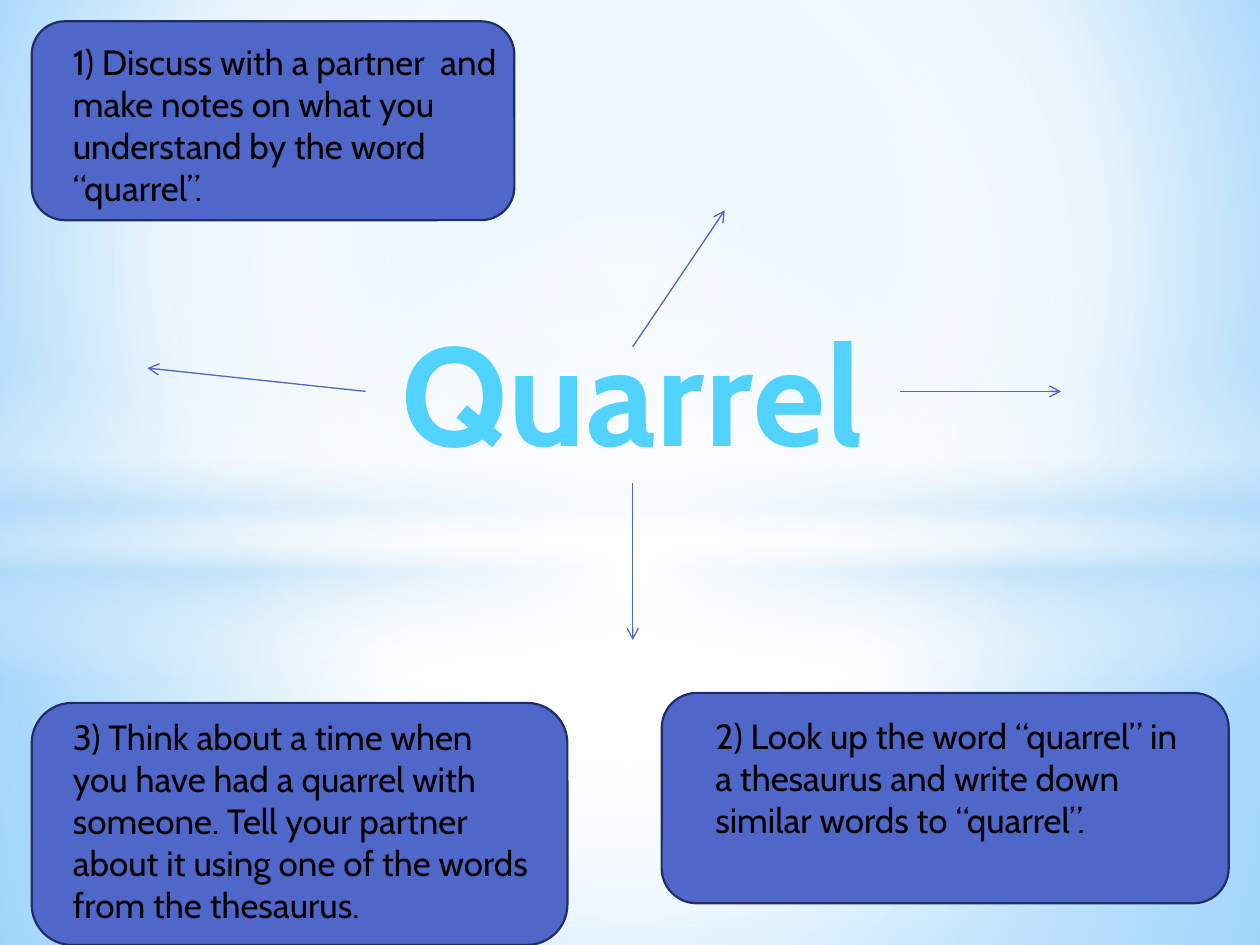
from dataclasses import dataclass
from typing import NamedTuple, Optional

from lxml import etree
from pptx import Presentation
from pptx.dml.color import RGBColor
from pptx.enum import shapes, text
from pptx.oxml.ns import qn
from pptx.util import Cm, Pt


@dataclass(frozen=True)
class Theme:
    font: str = "Cabin"
    head: int = 80
    body: int = 20
    ink: str = "000000"
    card: str = "4E67C8"
    edge: str = "1F2E69"
    white: str = "FFFFFF"
    mist: str = "B4DCFA"
    rim: float = 1.25
    line: float = 0.75


class Box(NamedTuple):
    left: float
    top: float
    width: float
    height: float

    def cm(self):
        return [Cm(n) for n in self]


class Stop(NamedTuple):
    pos: int
    color: str
    alpha: int = 100


class Layer(NamedTuple):
    kind: shapes.MSO_SHAPE
    box: Box
    stops: list
    angle: Optional[int] = None


class Card(NamedTuple):
    box: Box
    area: Box
    words: str


class Arrow(NamedTuple):
    start: tuple
    tip: tuple
    site: Optional[int] = None


T = Theme()
WIDE, HIGH = 25.4, 19.05
SPLIT = 10.74
MID = (50, 50, 50, 50)
HEAD = Box(7.37, 6.05, 10.77, 3.68)
KINDS = shapes.MSO_SHAPE

LAYERS = [
    Layer(KINDS.RECTANGLE, Box(0, SPLIT, WIDE, HIGH - SPLIT),
          [Stop(0, T.white, 91), Stop(37, T.white, 76), Stop(100, T.mist, 79)]),
    Layer(KINDS.RECTANGLE, Box(0, 0, WIDE, SPLIT),
          [Stop(0, T.white, 89), Stop(48, T.white, 62), Stop(100, T.mist, 79)]),
    Layer(KINDS.RECTANGLE, Box(0, 7.37, WIDE, 6.35),
          [Stop(0, T.white, 0), Stop(29, T.white, 30), Stop(45, T.mist, 40),
           Stop(55, T.white, 26), Stop(65, T.mist, 60), Stop(100, T.white, 0)], 90),
    Layer(KINDS.OVAL, Box(0, 4.45, WIDE, 14.17),
          [Stop(0, T.white), Stop(54, T.white, 0)]),
]

CARDS = [
    Card(Box(0.64, 0.43, 9.73, 4.01), Box(1.22, 0.69, 9.32, 3.68),
         "1) Discuss with a partner  and make notes on what you understand "
         "by the word “quarrel”."),
    Card(Box(13.34, 13.97, 11.43, 4.24), Box(14.17, 14.27, 9.96, 3.68),
         "2) Look up the word “quarrel” in a thesaurus and write down  "
         "similar words to “quarrel”."),
    Card(Box(0.64, 14.17, 10.8, 4.88), Box(1.22, 14.3, 9.8, 4.52),
         "3) Think about a time when you have had a quarrel with someone. "
         "Tell your partner about it using one of the words from the thesaurus."),
]

MID_X = HEAD.left + HEAD.width / 2
MID_Y = HEAD.top + HEAD.height / 2
ARROWS = [
    Arrow((HEAD.left, MID_Y), (2.97, 7.42), 1),
    Arrow((MID_X, 6.99), (14.61, 4.24)),
    Arrow((HEAD.left + HEAD.width, MID_Y), (21.39, MID_Y), 3),
    Arrow((MID_X, HEAD.top + HEAD.height), (MID_X, 12.9), 2),
]


def rgb(color: str) -> RGBColor:
    return RGBColor.from_string(color)


def blend(fill, host, stops: list, angle=None, focus: tuple = MID) -> None:
    """Give fill, the first gradient inside host, these stops; no angle means circular."""
    fill.gradient()
    grad = host.find(".//" + qn("a:gradFill"))
    for part in list(grad):
        grad.remove(part)
    group = etree.SubElement(grad, qn("a:gsLst"))
    for stop in stops:
        item = etree.SubElement(group, qn("a:gs"), pos=str(stop.pos * 1000))
        color = etree.SubElement(item, qn("a:srgbClr"), val=stop.color)
        if stop.alpha < 100:
            etree.SubElement(color, qn("a:alpha"), val=str(stop.alpha * 1000))
    if angle is not None:
        etree.SubElement(grad, qn("a:lin"), ang=str(angle * 60000), scaled="0")
    else:
        way = etree.SubElement(grad, qn("a:path"), path="circle")
        sides = {k: str(n * 1000) for k, n in zip("ltrb", focus)}
        etree.SubElement(way, qn("a:fillToRect"), **sides)


def write(shape, words: str, *, size: int, color: str = T.ink, bold: bool = False,
          wrap: bool = True, align=text.PP_ALIGN.LEFT):
    frame = shape.text_frame
    frame.word_wrap = wrap
    frame.auto_size = text.MSO_AUTO_SIZE.SHAPE_TO_FIT_TEXT
    frame.vertical_anchor = text.MSO_ANCHOR.TOP
    para = frame.paragraphs[0]
    para.alignment = align
    run = para.add_run()
    run.text = words
    font = run.font
    font.name, font.size, font.bold = T.font, Pt(size), bold
    font.color.rgb = rgb(color)
    return run


def add_layer(slide, layer: Layer) -> None:
    shape = slide.shapes.add_shape(layer.kind, *layer.box.cm())
    shape.shadow.inherit = False
    shape.line.fill.background()
    blend(shape.fill, shape.element, layer.stops, layer.angle)


def add_title(slide):
    title = slide.shapes.title
    title.left, title.top, title.width, title.height = HEAD.cm()
    run = write(title, "Quarrel", size=T.head, bold=True, wrap=False,
                align=text.PP_ALIGN.CENTER)
    blend(run.font.fill, title.element, [Stop(25, "52D2FF"), Stop(100, "20A0CE")], 90)
    run.font._element.set("spc", "50")
    slide.shapes.element.append(title.element)  # in front of the backdrop
    return title


def add_card(slide, card: Card) -> None:
    shape = slide.shapes.add_shape(KINDS.ROUNDED_RECTANGLE, *card.box.cm())
    shape.shadow.inherit = False
    shape.fill.solid()
    shape.fill.fore_color.rgb = rgb(T.card)
    shape.line.color.rgb = rgb(T.edge)
    shape.line.width = Pt(T.rim)
    write(slide.shapes.add_textbox(*card.area.cm()), card.words, size=T.body)


def add_arrow(slide, title, arrow: Arrow) -> None:
    ends = [Cm(n) for n in arrow.start + arrow.tip]
    link = slide.shapes.add_connector(shapes.MSO_CONNECTOR.STRAIGHT, *ends)
    if arrow.site is not None:
        link.begin_connect(title, arrow.site)
    link.line.color.rgb = rgb(T.card)
    link.line.width = Pt(T.line)
    etree.SubElement(link.line._get_or_add_ln(), qn("a:tailEnd"), type="arrow")
    etree.SubElement(link.element.spPr, qn("a:effectLst"))


def main() -> None:
    deck = Presentation()
    deck.slide_width, deck.slide_height = Cm(WIDE), Cm(HIGH)
    slide = deck.slides.add_slide(deck.slide_layouts[5])
    blend(slide.background.fill, slide.element,
          [Stop(0, "9ED5FF"), Stop(60, T.white), Stop(100, "5BB9FF")],
          focus=(20, 10, 20, 60))
    for layer in LAYERS:
        add_layer(slide, layer)
    title = add_title(slide)
    first, *rest = CARDS
    add_card(slide, first)
    for arrow in ARROWS:
        add_arrow(slide, title, arrow)
    for card in rest:
        add_card(slide, card)
    deck.save("out.pptx")


if __name__ == "__main__":
    main()
